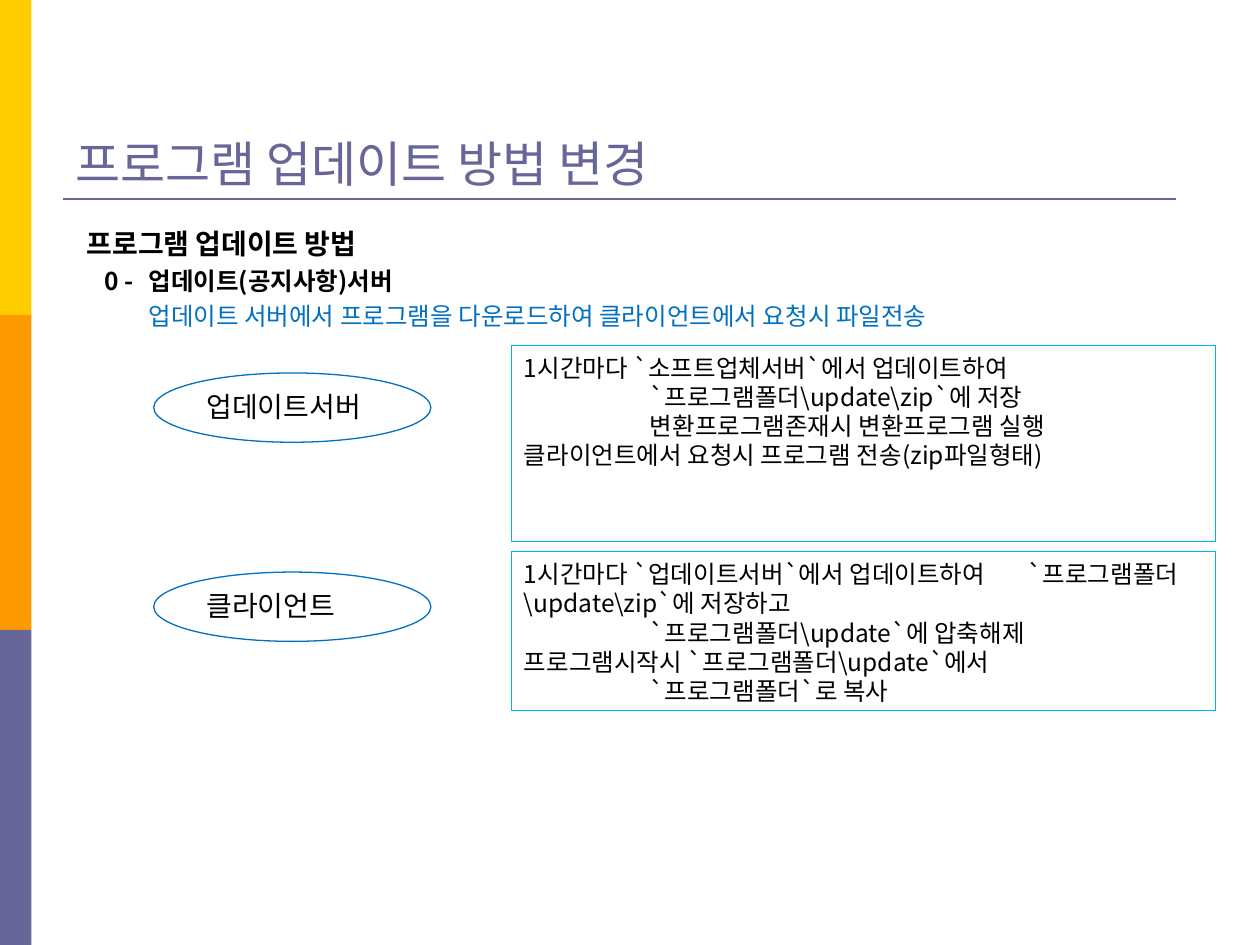
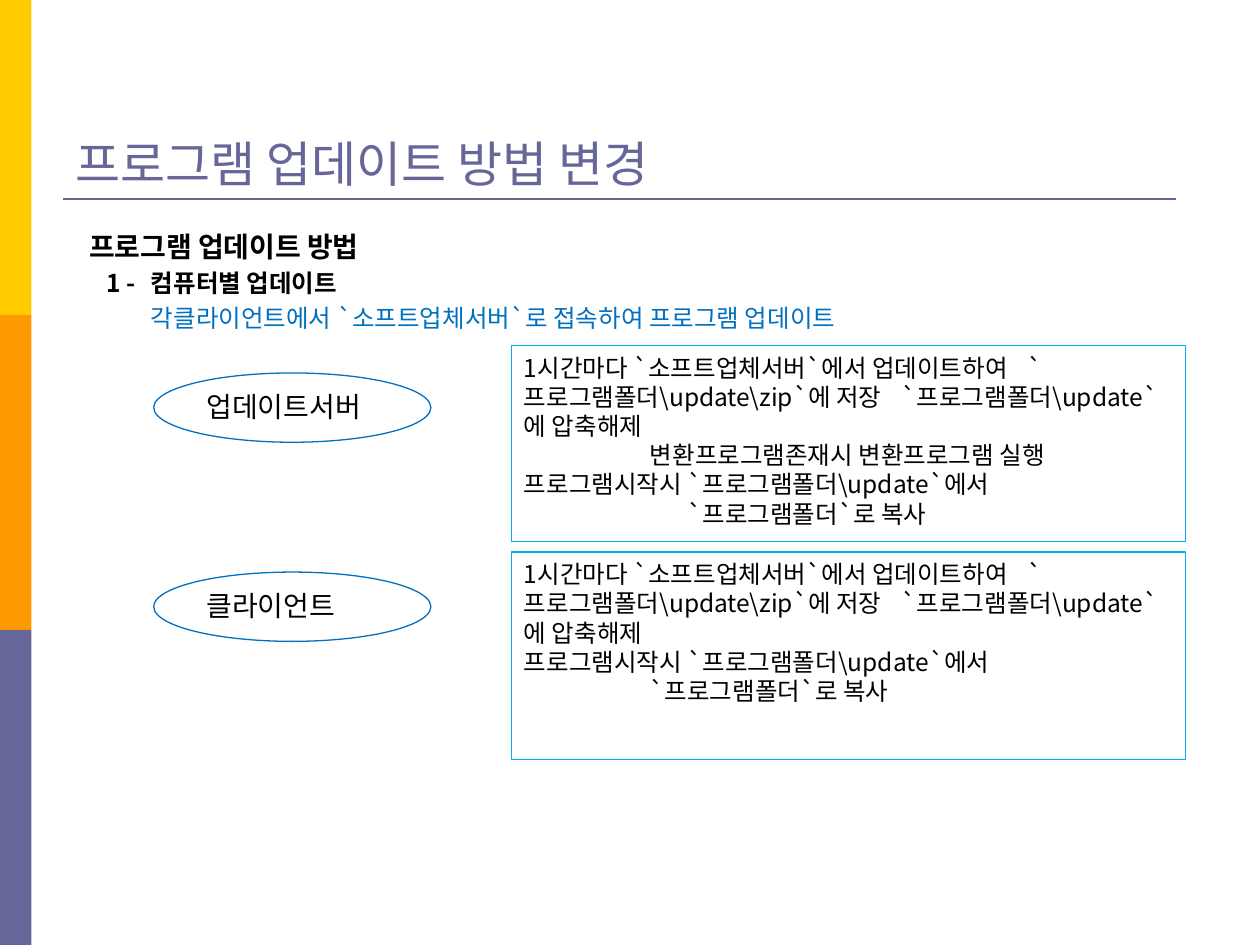
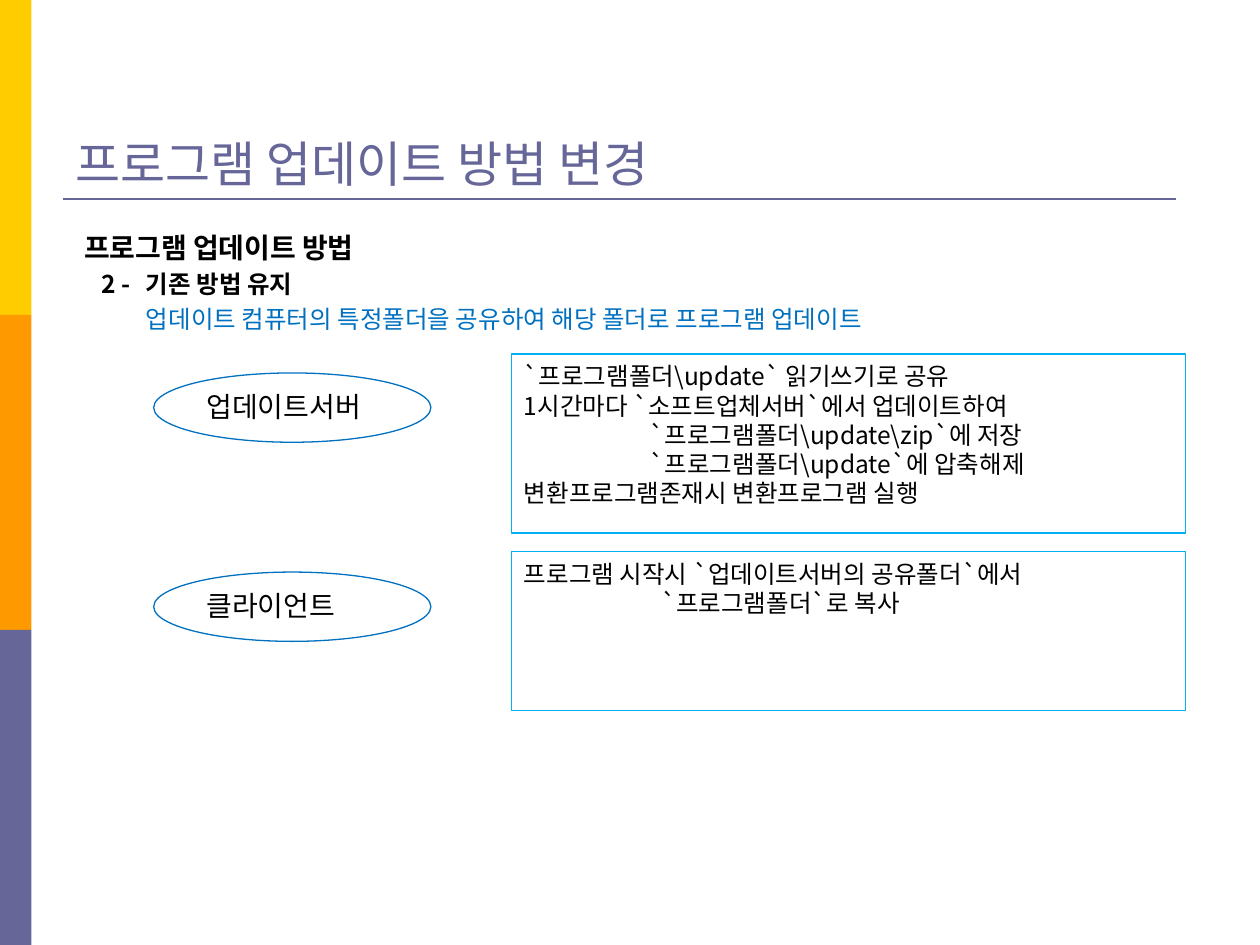
from pptx import Presentation
from pptx.dml.color import RGBColor
from pptx.enum.shapes import MSO_CONNECTOR, MSO_SHAPE
from pptx.enum.text import MSO_ANCHOR, PP_ALIGN
from pptx.oxml.ns import qn
from pptx.util import Inches, Pt
from lxml.etree import SubElement

# Content: box lines are (indent in inches, text)
TITLE = "프로그램 업데이트 방법 변경"
HEADING = "프로그램 업데이트 방법"
ROLES = ["업데이트서버", "클라이언트"]

FROM_VENDOR = "1시간마다 `소프트업체서버`에서 업데이트하여"
SAVE_ZIP = "`프로그램폴더\\update\\zip`에 저장"
UNZIP = "`프로그램폴더\\update`에 압축해제"
CONVERT = "변환프로그램존재시 변환프로그램 실행"
ON_START = "프로그램시작시 `프로그램폴더\\update`에서"
COPY = "`프로그램폴더`로 복사"
FETCH_ALL = f"{FROM_VENDOR}\t{SAVE_ZIP} \t{UNZIP}"

SLIDES = [
    {
        "method": "0 -\t업데이트(공지사항)서버",
        "summary": "업데이트 서버에서 프로그램을 다운로드하여 클라이언트에서 요청시 파일전송",
        "intro_at": (0.59, 1.75),
        "box_width": 5.59,
        "boxes": [
            (2.74, 1.56, [(0, FROM_VENDOR), (1, SAVE_ZIP), (1, CONVERT),
                          (0, "클라이언트에서 요청시 프로그램 전송(zip파일형태)")]),
            (4.38, 1.26, [(0, f"1시간마다 `업데이트서버`에서 업데이트하여\t{SAVE_ZIP}하고"),
                          (1, UNZIP), (0, ON_START), (1, COPY)]),
        ],
    },
    {
        "method": "1 -\t컴퓨터별 업데이트",
        "summary": "각클라이언트에서 `소프트업체서버`로 접속하여 프로그램 업데이트",
        "intro_at": (0.61, 1.77),
        "box_width": 5.35,
        "boxes": [
            (2.74, 1.56, [(0, FETCH_ALL), (1, CONVERT), (0, ON_START), (1.3, COPY)]),
            (4.38, 1.65, [(0, FETCH_ALL), (0, ON_START), (1, COPY)]),
        ],
    },
    {
        "method": "2 -\t기존 방법 유지",
        "summary": "업데이트 컴퓨터의 특정폴더을 공유하여 해당 폴더로 프로그램 업데이트",
        "intro_at": (0.57, 1.78),
        "box_width": 5.35,
        "boxes": [
            (2.81, 1.42, [(0, "`프로그램폴더\\update` 읽기쓰기로 공유"), (0, FROM_VENDOR),
                          (1, SAVE_ZIP), (1, UNZIP), (0, CONVERT)]),
            (4.38, 1.26, [(0, "프로그램 시작시 `업데이트서버의 공유폴더`에서"), (1.09, COPY)]),
        ],
    },
]

# Shared look
FONT = "Noto Sans CJK KR"
COLORS = {"yellow": "FFCC00", "orange": "FF9900", "violet": "666699",
          "text": "000000", "blue": "0070C0", "cyan": "00B0F0"}
BANDS = ["yellow", "orange", "violet"]
BAND_W, BAND_H = 0.25, 2.5
OVAL_X, OVAL_Y, OVAL_STEP, OVAL_W, OVAL_H = 1.22, 2.96, 1.58, 2.2, 0.55
BOX_X = 4.06
LINE_FACTOR = 1.195


def rgb(name):
    return RGBColor.from_string(COLORS[name])


def write(p, text, size, color="text", bold=False, left=0, first=0, before=0):
    p.text = text
    p.alignment = PP_ALIGN.LEFT
    p.line_spacing = Pt(round(size * LINE_FACTOR, 1))
    p.space_before = Pt(before)
    f = p.font
    f.name, f.size, f.bold = FONT, Pt(size), bold
    f.color.rgb = rgb(color)
    SubElement(f._element, qn("a:ea")).set("typeface", FONT)
    pPr = p._p.get_or_add_pPr()
    pPr.set("marL", str(Inches(left)))
    pPr.set("indent", str(Inches(first)))


def write_all(tf, paragraphs):
    tf.word_wrap = True
    tf.vertical_anchor = MSO_ANCHOR.TOP
    for i, options in enumerate(paragraphs):
        p = tf.paragraphs[0] if i == 0 else tf.add_paragraph()
        write(p, **options)


def add_outline(s, kind, at, line, paragraphs):
    sp = s.shapes.add_shape(kind, *map(Inches, at))
    sp.shadow.inherit = False
    sp.fill.background()
    sp.line.color.rgb = rgb(line)
    sp.line.width = Pt(0.75)
    write_all(sp.text_frame, paragraphs)
    return sp


def decorate_layout(layout, s):
    """Draw the side bands and title rule, then move them to the layout."""
    parts = []
    for i, color in enumerate(BANDS):
        sp = s.shapes.add_shape(MSO_SHAPE.RECTANGLE, 0, Inches(i * BAND_H),
                                Inches(BAND_W), Inches(BAND_H))
        sp.shadow.inherit = False
        sp.fill.solid()
        sp.fill.fore_color.rgb = rgb(color)
        sp.line.fill.background()
        parts.append(sp)
    rule = s.shapes.add_connector(MSO_CONNECTOR.STRAIGHT, Inches(0.5), Inches(1.58),
                                  Inches(9.33), Inches(1.58))
    rule.line.color.rgb = rgb("violet")
    rule.line.width = Pt(1.5)
    SubElement(rule._element.spPr, qn("a:effectLst"))
    parts.append(rule)
    for i, sp in enumerate(parts):
        sp._element.xpath(".//p:cNvPr")[0].set("id", str(100 + i))
        layout.shapes._spTree.insert(2 + i, sp._element)


def add_title(s):
    title = s.shapes.title
    title.left, title.top, title.width, title.height = map(Inches, (0.5, 0.33, 9, 1.25))
    write_all(title.text_frame, [dict(text=TITLE, size=28, color="violet")])
    title.text_frame.vertical_anchor = MSO_ANCHOR.BOTTOM


def add_intro(s, data):
    sp = s.shapes.add_textbox(*map(Inches, (*data["intro_at"], 9.37, 1.1)))
    write_all(sp.text_frame, [
        dict(text=HEADING, size=16, bold=True),
        dict(text=data["method"], size=14, bold=True, left=0.49, first=-0.35, before=3.3),
        dict(text=data["summary"], size=14, color="blue", left=0.49, before=3.3),
    ])


def add_roles(s, data):
    for i, (role, (top, height, lines)) in enumerate(zip(ROLES, data["boxes"])):
        add_outline(s, MSO_SHAPE.OVAL, (OVAL_X, OVAL_Y + i * OVAL_STEP, OVAL_W, OVAL_H),
                    "blue", [dict(text=role, size=16)])
        box = add_outline(s, MSO_SHAPE.RECTANGLE, (BOX_X, top, data["box_width"], height),
                          "cyan", [dict(text=t, size=14, left=x) for x, t in lines])
        box.text_frame.margin_top = Inches(0.06)


def main():
    prs = Presentation()
    prs.slide_width, prs.slide_height = Inches(10), Inches(7.5)
    layout = prs.slide_layouts[5]
    for i, data in enumerate(SLIDES):
        s = prs.slides.add_slide(layout)
        if i == 0:
            decorate_layout(layout, s)
        add_title(s)
        add_intro(s, data)
        add_roles(s, data)
    prs.save("out.pptx")


if __name__ == "__main__":
    main()
